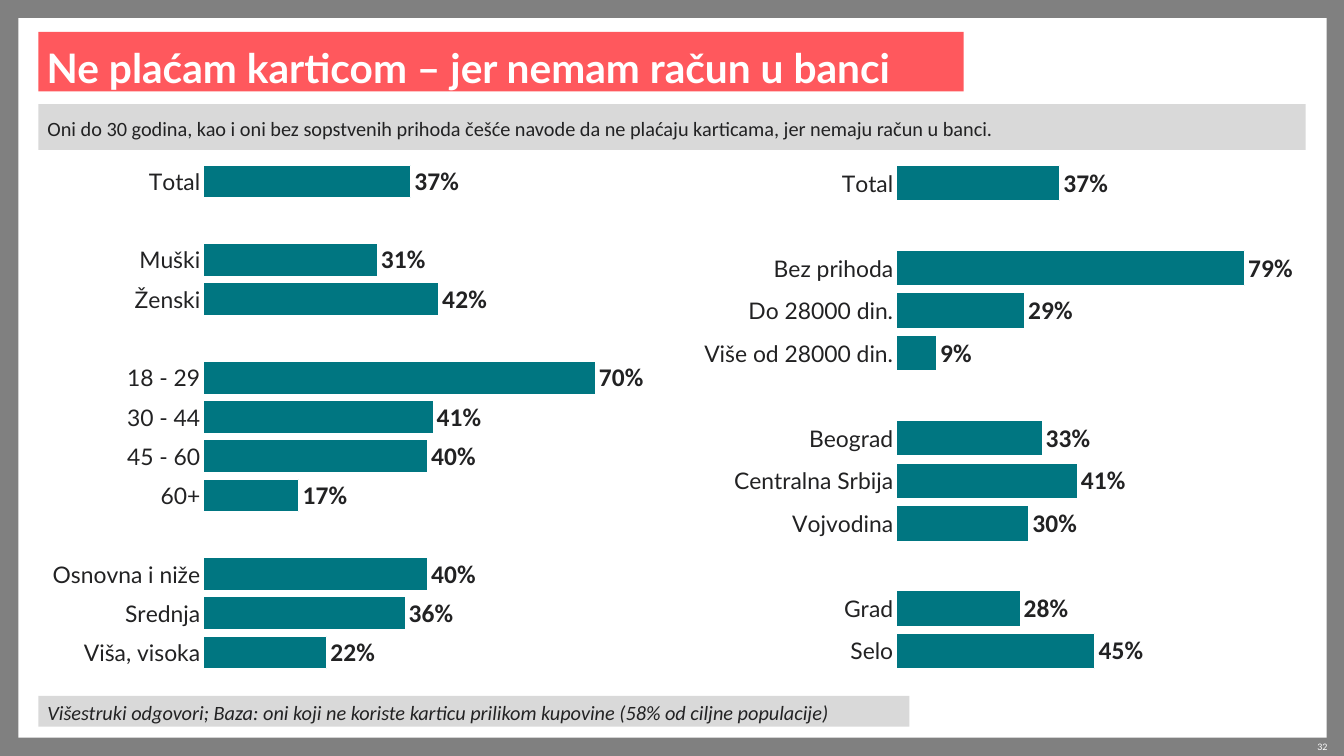
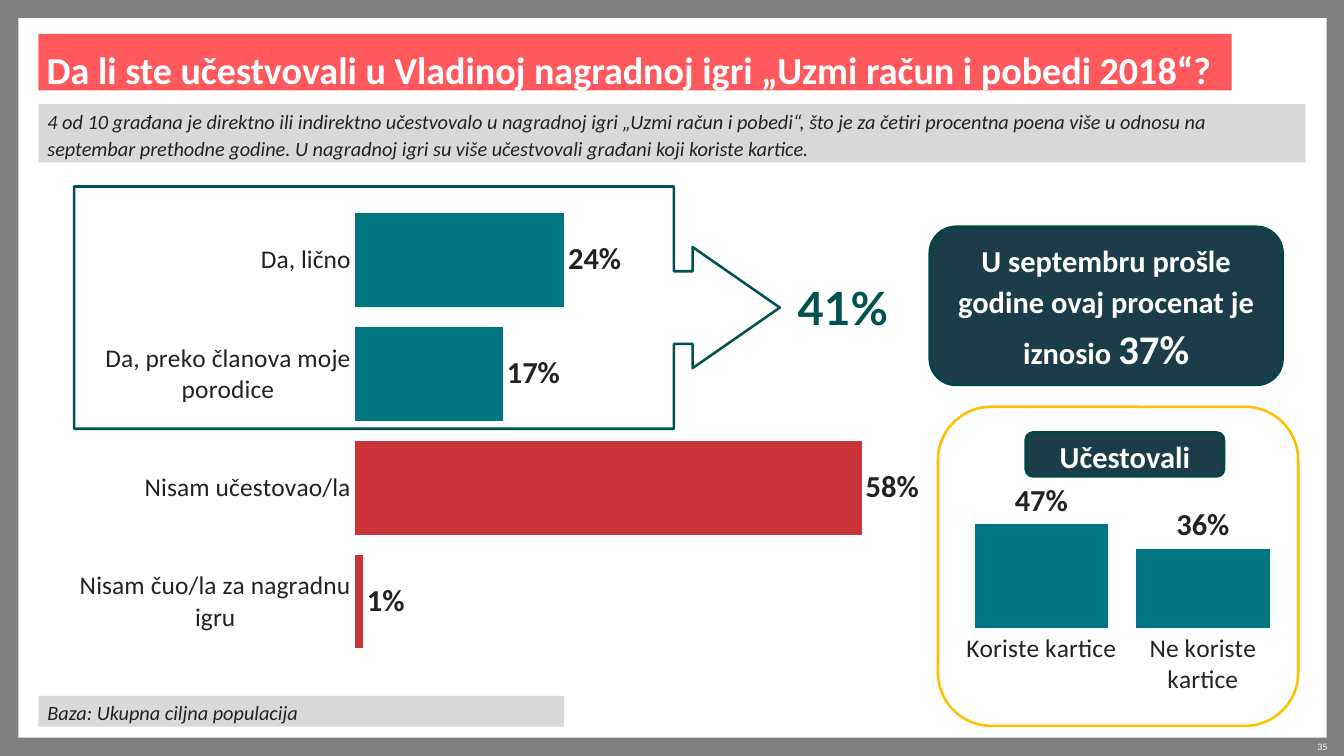
import pptx
import pptx.chart.data
import pptx.dml.color
import pptx.enum.chart
import pptx.enum.shapes
import pptx.enum.text
import pptx.oxml
import pptx.util

Pt = pptx.util.Pt
SHAPE = pptx.enum.shapes.MSO_SHAPE
ALIGN = pptx.enum.text.PP_ALIGN
CHART = pptx.enum.chart.XL_CHART_TYPE

COLORS = {
    name: pptx.dml.color.RGBColor.from_string(value)
    for name, value in {
        "frame": "808080", "white": "FFFFFF", "coral": "FF585D", "band": "D9D9D9",
        "ink": "222223", "teal": "007681", "red": "CB333B", "green": "005250",
        "navy": "1B3D49", "edge": "004644", "amber": "FFC000",
    }.items()
}
MARGIN = 30.24
BAND_WIDTH = 998
CHART_XML = 'xmlns:c="http://schemas.openxmlformats.org/drawingml/2006/chart"'


def add_box(page, kind, area, fill=None, line=None, text="", size=16, color="ink",
            font="Calibri", bold=False, italic=False, align=ALIGN.LEFT,
            insets=(7.2, 0), spacing=1.1):
    """Add a flat shape with one formatted paragraph and return it."""
    box = page.shapes.add_shape(kind, *map(Pt, area))
    box.shadow.inherit = False
    if fill:
        box.fill.solid()
        box.fill.fore_color.rgb = COLORS[fill]
    else:
        box.fill.background()
    if line:
        box.line.color.rgb = COLORS[line]
        box.line.width = Pt(2)
    else:
        box.line.fill.background()
    frame = box.text_frame
    frame.word_wrap = True
    frame.vertical_anchor = pptx.enum.text.MSO_ANCHOR.MIDDLE
    frame.margin_left = frame.margin_right = Pt(insets[0])
    frame.margin_top = frame.margin_bottom = Pt(insets[1])
    para = frame.paragraphs[0]
    para.text = text
    para.alignment = align
    para.line_spacing = spacing
    para.font.name, para.font.size = font, Pt(size)
    para.font.bold, para.font.italic = bold, italic
    para.font.color.rgb = COLORS[color]
    return box


def add_bars(page, kind, area, plot_area, bars, top, axis_font, label_size):
    """Add a one-series percentage chart; plot_area holds x, y, w, h as fractions."""
    data = pptx.chart.data.CategoryChartData(number_format="General")
    data.categories = [name for name, value in bars]
    data.add_series("Series 1", [value for name, value in bars])
    chart = page.shapes.add_chart(kind, *map(Pt, area), data).chart
    chart.has_title = chart.has_legend = False
    chart.font.name, chart.font.size = "Lato", Pt(18)
    chart.font.color.rgb = COLORS["ink"]

    names = chart.category_axis
    names.reverse_order = kind == CHART.BAR_CLUSTERED
    names.major_tick_mark = pptx.enum.chart.XL_TICK_MARK.NONE
    names.format.line.fill.background()
    names.tick_labels.font.name, names.tick_labels.font.size = axis_font[0], Pt(axis_font[1])
    names.tick_labels.font.color.rgb = COLORS["ink"]
    scale = chart.value_axis
    scale.visible = scale.has_major_gridlines = False
    scale.minimum_scale, scale.maximum_scale = 0, top

    plot = chart.plots[0]
    plot.gap_width = 20
    plot.vary_by_categories = False
    series = plot.series[0]
    series.invert_if_negative = False
    series.format.fill.solid()
    series.format.fill.fore_color.rgb = COLORS["teal"]
    series.format.line.color.rgb = COLORS["white"]
    series.format.line.width = Pt(0.75)
    labels = series.data_labels
    labels.show_value = True
    labels.number_format, labels.number_format_is_linked = '#"%"', False
    labels.position = pptx.enum.chart.XL_LABEL_POSITION.OUTSIDE_END
    labels.font.name, labels.font.size, labels.font.bold = "Calibri", Pt(label_size), True
    labels.font.color.rgb = COLORS["ink"]

    sizes = "".join(f'<c:{tag} val="{part}"/>' for tag, part in zip("xywh", plot_area))
    layout = pptx.oxml.parse_xml(
        f'<c:layout {CHART_XML}><c:manualLayout><c:layoutTarget val="inner"/>'
        f'<c:xMode val="edge"/><c:yMode val="edge"/>{sizes}</c:manualLayout></c:layout>')
    plot_node = chart._chartSpace.chart.plotArea
    for old in plot_node.findall(layout.tag):
        plot_node.remove(old)
    plot_node.insert(0, layout)
    return chart


deck = pptx.Presentation()
deck.slide_width, deck.slide_height = Pt(1058.4), Pt(595.44)
title_only = deck.slide_layouts[5]
title_only.background.fill.solid()
title_only.background.fill.fore_color.rgb = COLORS["frame"]

# Shared frame: panel, title, lead band, base note and page number
frames = [
    dict(title="Ne plaćam karticom – jer nemam račun u banci", font="Lato", size=32,
         top=25.2, width=728.6, height=46.8, number="32",
         lead="Oni do 30 godina, kao i oni bez sopstvenih prihoda češće navode da ne "
              "plaćaju karticama, jer nemaju račun u banci.",
         lead_height=36, lead_italic=False,
         base="Višestruki odgovori; Baza: oni koji ne koriste karticu prilikom kupovine "
              "(58% od ciljne populacije)", base_width=686),
    dict(title="Da li ste učestvovali u Vladinoj nagradnoj igri „Uzmi račun i pobedi 2018“?",
         font="Calibri", size=30, top=26.6, width=939.6, height=44.6, number="35",
         lead="4 od 10 građana je direktno ili indirektno učestvovalo u nagradnoj igri „Uzmi "
              "račun i pobedi“, što je za četiri procentna poena više u odnosu na septembar "
              "prethodne godine. U nagradnoj igri su više učestvovali građani koji koriste "
              "kartice.",
         lead_height=46, lead_italic=True,
         base="Baza: Ukupna ciljna populacija", base_width=414),
]
pages = []
for frame in frames:
    page = deck.slides.add_slide(title_only)
    pages.append(page)
    panel = add_box(page, SHAPE.RECTANGLE, (14.4, 14.4, 1030.3, 566.6), "white")
    page.shapes._spTree.insert(2, panel._element)

    title = page.shapes.title
    title.left, title.top = Pt(MARGIN), Pt(frame["top"])
    title.width, title.height = Pt(frame["width"]), Pt(frame["height"])
    title.fill.solid()
    title.fill.fore_color.rgb = COLORS["coral"]
    text = title.text_frame
    text.auto_size = pptx.enum.text.MSO_AUTO_SIZE.NONE
    text.word_wrap = True
    text.vertical_anchor = pptx.enum.text.MSO_ANCHOR.MIDDLE
    text.margin_left = text.margin_right = Pt(6.5)
    text.margin_top, text.margin_bottom = Pt(5.8), 0
    para = text.paragraphs[0]
    para.text = frame["title"]
    para.alignment = ALIGN.LEFT
    para.line_spacing = Pt(41)
    para.font.name, para.font.size, para.font.bold = frame["font"], Pt(frame["size"]), True
    para.font.color.rgb = COLORS["white"]

    add_box(page, SHAPE.RECTANGLE, (MARGIN, 82, BAND_WIDTH, frame["lead_height"]), "band",
            text=frame["lead"], italic=frame["lead_italic"])
    add_box(page, SHAPE.RECTANGLE, (MARGIN, 548, frame["base_width"], 24.4), "band",
            text=frame["base"], italic=True)
    add_box(page, SHAPE.RECTANGLE, (988.6, 583.2, 56.9, 9.4), text=frame["number"], size=7,
            color="white", font="Lato", align=ALIGN.RIGHT, insets=(0, 0))

reasons, game = pages

# Reasons by demographic group
add_bars(reasons, CHART.BAR_CLUSTERED, (36, 127.4, 510.5, 402.5), (0.244, 0, 0.69, 0.999),
         [("Total", 37), ("", None), ("Muški", 31), ("Ženski", 42), ("", None),
          ("18 - 29", 70), ("30 - 44", 41), ("45 - 60", 40), ("60+", 17), ("", None),
          ("Osnovna i niže", 40), ("Srednja", 36), ("Viša, visoka", 22)],
         80, ("Lato", 18), 20)
add_bars(reasons, CHART.BAR_CLUSTERED, (522, 127.4, 506.2, 402.5), (0.364, 0, 0.548, 0.999),
         [("Total", 37), ("", None), ("Bez prihoda", 79), ("Do 28000 din.", 29),
          ("Više od 28000 din.", 9), ("", None), ("Beograd", 33), ("Centralna Srbija", 41),
          ("Vojvodina", 30), ("", None), ("Grad", 28), ("Selo", 45)],
         80, ("Lato", 18), 20)

# Participation in the prize game
answers = add_bars(game, CHART.BAR_CLUSTERED, (58.3, 159.8, 703.4, 359.3),
                   (0.314, 0, 0.686, 0.999),
                   [("Da, lično", 24), ("Da, preko članova moje porodice", 17),
                    ("Nisam učestovao/la", 58), ("Nisam čuo/la za nagradnu igru", 1)],
                   70, ("Calibri", 20), 24)
for index in (2, 3):
    bar = answers.plots[0].series[0].points[index].format
    bar.fill.solid()
    bar.fill.fore_color.rgb = COLORS["red"]
    bar.line.color.rgb = COLORS["white"]
    bar.line.width = Pt(0.75)

add_box(game, SHAPE.RECTANGLE, (609.8, 216.7, 108, 51), text="41%", size=36, color="green",
        font="Lato", bold=True, align=ALIGN.CENTER, insets=(7.2, 3.6), spacing=1.0)
callout = add_box(game, SHAPE.RIGHT_ARROW_CALLOUT, (58.3, 146.9, 555.8, 190.8), line="green")
for index, ratio in enumerate((0.3, 0.25, 0.36, 0.85)):
    callout.adjustments[index] = ratio

badge = dict(fill="navy", line="edge", size=24, color="white", bold=True,
             align=ALIGN.CENTER, insets=(11.5, 5.8))
last_year = add_box(game, SHAPE.ROUNDED_RECTANGLE, (732.2, 178.6, 277.9, 124.6),
                    text="U septembru prošle godine ovaj procenat je iznosio ", **badge)
span = last_year.text_frame.paragraphs[0].add_run()
span.text = "37%"
span.font.size = Pt(32)

add_bars(game, CHART.COLUMN_CLUSTERED, (753.1, 372.2, 257.8, 187.9),
         (0.013, 0.185, 0.987, 0.47),
         [("Koriste kartice", 47), ("Ne koriste kartice", 36)], 50, ("Calibri", 20), 24)
add_box(game, SHAPE.ROUNDED_RECTANGLE, (807.8, 340.6, 156.2, 34.6), text="Učestovali", **badge)
add_box(game, SHAPE.ROUNDED_RECTANGLE, (738.7, 320.4, 283.7, 251.3), line="amber")

deck.save("out.pptx")
